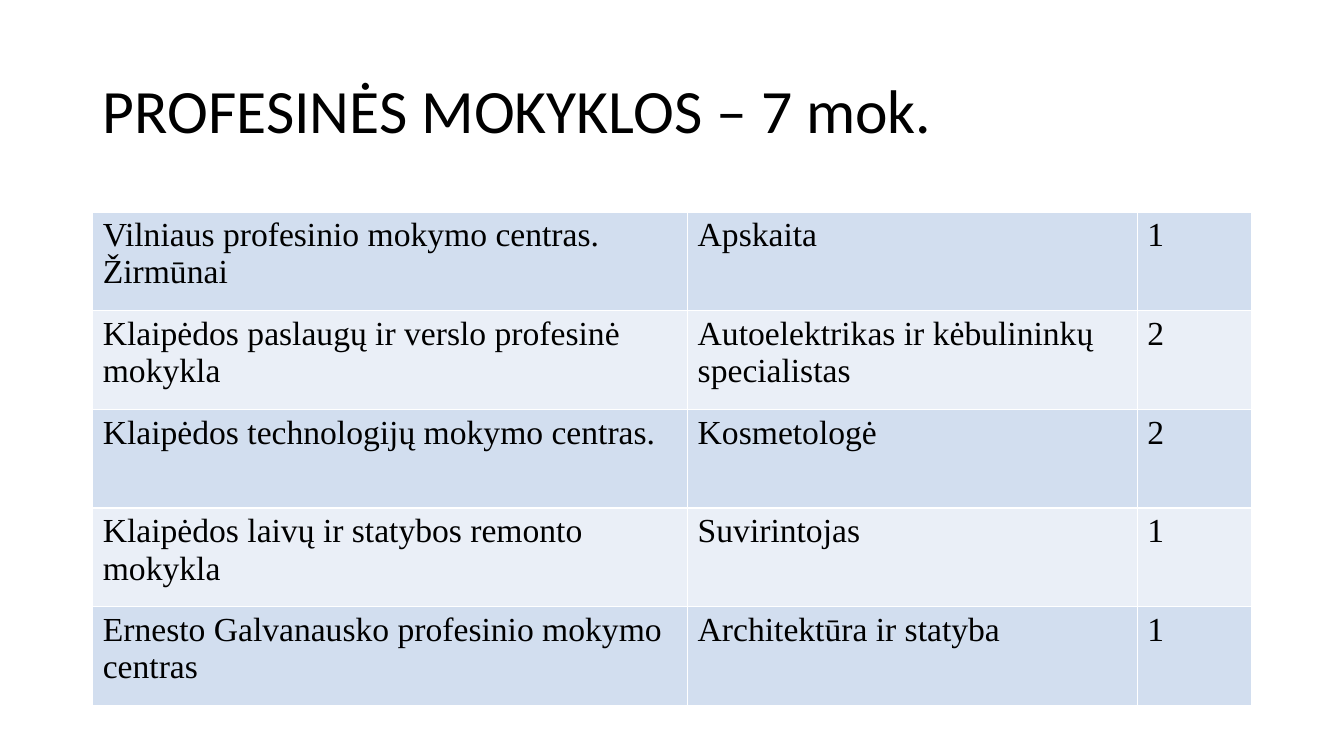
from dataclasses import dataclass

from lxml.etree import SubElement
from pptx import Presentation
from pptx.dml.color import RGBColor
from pptx.enum.text import MSO_ANCHOR, MSO_AUTO_SIZE, PP_ALIGN
from pptx.oxml.ns import qn
from pptx.slide import Slide
from pptx.table import _Cell
from pptx.text.text import _Paragraph
from pptx.util import Inches, Pt

WHITE, BLACK = "FFFFFF", "000000"
BANDS = ("D2DEEF", "EAEFF7")
COLUMN_WIDTHS = (5.9, 4.46, 1.13)
HEADER_HEIGHT, ROW_HEIGHT = 0.54, 0.98


@dataclass(frozen=True)
class Programme:
    """A school, the subject chosen there and the number of pupils."""

    school: str
    subject: str
    pupils: int


PROGRAMMES = (
    Programme("Vilniaus profesinio mokymo centras. Žirmūnai", "Apskaita", 1),
    Programme("Klaipėdos paslaugų ir verslo profesinė mokykla",
              "Autoelektrikas ir kėbulininkų specialistas", 2),
    Programme("Klaipėdos technologijų mokymo centras.", "Kosmetologė", 2),
    Programme("Klaipėdos laivų ir statybos remonto mokykla", "Suvirintojas", 1),
    Programme("Ernesto Galvanausko profesinio mokymo centras",
              "Architektūra ir statyba", 1),
)


def colour(value: str) -> RGBColor:
    """Turn a hex string into a colour."""
    return RGBColor.from_string(value)


def format_runs(paragraph: _Paragraph, font: str, size: float) -> None:
    """Give every run of a paragraph its font, size and black colour."""
    for run in paragraph.runs:
        run.font.name = font
        run.font.size = Pt(size)
        run.font.bold = False
        run.font.color.rgb = colour(BLACK)


def paint_cell(cell: _Cell, fill: str, top: float = 1, bottom: float = 1) -> None:
    """Fill a cell and draw its white borders, with widths in points."""
    cell.fill.solid()
    cell.fill.fore_color.rgb = colour(fill)
    properties = cell._tc.get_or_add_tcPr()
    sides = {"lnL": 1, "lnR": 1, "lnT": top, "lnB": bottom}
    for position, (side, width) in enumerate(sides.items()):
        border = SubElement(properties, qn(f"a:{side}"), w=str(Pt(width)))
        solid = SubElement(border, qn("a:solidFill"))
        SubElement(solid, qn("a:srgbClr"), val=WHITE)
        properties.insert(position, border)


def add_title(slide: Slide, wording: str) -> None:
    """Place and format the slide title."""
    title = slide.shapes.title
    title.left, title.top = Inches(0.92), Inches(0.4)
    title.width, title.height = Inches(11.5), Inches(1.45)
    frame = title.text_frame
    frame.text = wording
    frame.word_wrap = True
    frame.auto_size = MSO_AUTO_SIZE.NONE
    frame.vertical_anchor = MSO_ANCHOR.MIDDLE
    heading = frame.paragraphs[0]
    heading.alignment = PP_ALIGN.LEFT
    heading.line_spacing = 0.9
    format_runs(heading, "Calibri", 44)


def add_programmes(slide: Slide, programmes: tuple[Programme, ...]) -> None:
    """Draw the table of schools below a blank merged header."""
    height = HEADER_HEIGHT + ROW_HEIGHT * len(programmes)
    table = slide.shapes.add_table(
        len(programmes) + 1, len(COLUMN_WIDTHS), Inches(0.92), Inches(1.56),
        Inches(sum(COLUMN_WIDTHS)), Inches(height)).table
    for column, width in zip(table.columns, COLUMN_WIDTHS):
        column.width = Inches(width)
    for row in table.rows:
        row.height = Inches(ROW_HEIGHT)
    table.rows[0].height = Inches(HEADER_HEIGHT)

    for cell in table.rows[0].cells:
        paint_cell(cell, WHITE, bottom=3)
    table.cell(0, 0).merge(table.cell(0, len(COLUMN_WIDTHS) - 1))

    for index, programme in enumerate(programmes):
        values = (programme.school, programme.subject, str(programme.pupils))
        for cell, value in zip(table.rows[index + 1].cells, values):
            paint_cell(cell, BANDS[index % 2], top=1 if index else 3)
            cell.text_frame.text = value
            format_runs(cell.text_frame.paragraphs[0], "Times New Roman", 24)


def main() -> None:
    """Build and save the slide."""
    presentation = Presentation()
    presentation.slide_width = Inches(13.33)
    presentation.slide_height = Inches(7.5)
    slide = presentation.slides.add_slide(presentation.slide_layouts[5])
    add_title(slide, "PROFESINĖS MOKYKLOS – 7 mok.")
    add_programmes(slide, PROGRAMMES)
    presentation.save("out.pptx")


if __name__ == "__main__":
    main()
